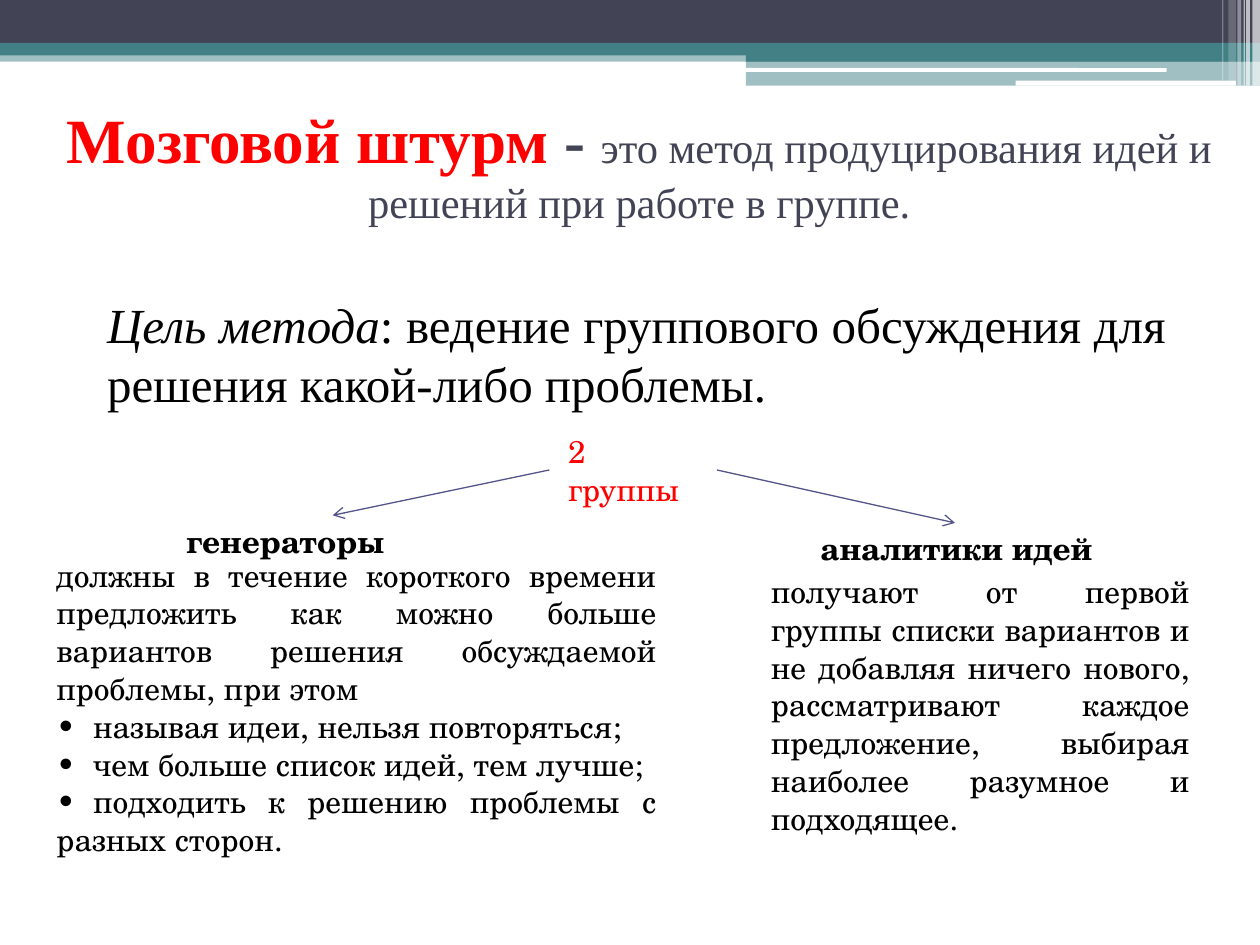
from dataclasses import dataclass
from lxml import etree
from pptx import Presentation
from pptx import util as u
from pptx.dml.color import RGBColor
from pptx.enum import shapes, text
from pptx.oxml.ns import qn

WIDTH, HEIGHT = u.Inches(10), u.Inches(7.5)
COLUMNS, ROWS = 100, 75


@dataclass(frozen=True)
class Theme:
    slate: str = "424456"
    teal: str = "438086"
    white: str = "FFFFFF"
    black: str = "000000"
    red: str = "FF0000"
    arrow: str = "53548A"
    serif: str = "Times New Roman"
    school: str = "TeX Gyre Schola"
    title: float = 36
    definition: float = 24.3
    goal: float = 28
    body: float = 18
    hairline: float = 0.75


THEME = Theme()


def across(columns):
    return round(WIDTH * columns / COLUMNS)


def down(rows):
    return round(HEIGHT * rows / ROWS)


def place(left, top, width, height):
    return across(left), down(top), across(width), down(height)


def style(target, values):
    for name, value in values.items():
        setattr(target, name, value)


def add_bar(page, area, color, opacity=100, kind=shapes.MSO_SHAPE.RECTANGLE):
    bar = page.shapes.add_shape(kind, *place(*area))
    bar.shadow.inherit = False
    bar.fill.solid()
    bar.fill.fore_color.rgb = RGBColor.from_string(color)
    bar.line.fill.background()
    if opacity < 100:
        tint = bar.fill._xPr.find(qn("a:solidFill"))[0]
        etree.SubElement(tint, qn("a:alpha"), val=str(opacity * 1000))


def add_stripes(page):
    add_bar(page, (0, 4, 100, 0.9), THEME.teal, 50)
    add_bar(page, (0, 0, 100, 3.4), THEME.slate)
    add_bar(page, (0, 3.4, 100, 1), THEME.teal)
    add_bar(page, (59.2, 3.9, 40.8, 1), THEME.teal)
    add_bar(page, (59.2, 4.8, 40.8, 2), THEME.teal, 50)
    for area in ((59.1, 5.4, 33.5, 0.3), (80.6, 6.4, 17.5, 0.4)):
        add_bar(page, area, THEME.white, kind=shapes.MSO_SHAPE.ROUNDED_RECTANGLE)
    for left, width, height, opacity in (
        (99.4, 0.6, 6.8, 65), (98.9, 0.3, 6.8, 65), (98.7, 0.1, 6.8, 60),
        (98.2, 0.3, 6.8, 40), (97.5, 0.6, 6.4, 20), (97, 0.1, 6.4, 30),
    ):
        add_bar(page, (left, 0, width, height), THEME.white, opacity)


def add_text(page, area, paragraphs, align=text.PP_ALIGN.LEFT, **frame_format):
    box = page.shapes.add_textbox(*place(*area))
    frame = box.text_frame
    style(frame, {"word_wrap": True, **frame_format})
    for index, spans in enumerate(paragraphs):
        para = frame.add_paragraph() if index else frame.paragraphs[0]
        para.alignment = align
        if spans[0][0].startswith("•"):
            tabs = etree.SubElement(para._p.get_or_add_pPr(), qn("a:tabLst"))
            etree.SubElement(tabs, qn("a:tab"), pos=str(across(2.9)), algn="l")
        for words, color, values in spans:
            span = para.add_run()
            span.text = words
            style(span.font, values)
            span.font.color.rgb = RGBColor.from_string(color)


def plain(words, color=THEME.black, **values):
    font = {"name": THEME.school, "size": u.Pt(THEME.body), **values}
    return [(words, color, font)]


def add_arrow(page, start, end):
    arrow = page.shapes.add_connector(
        shapes.MSO_CONNECTOR.STRAIGHT,
        across(start[0]), down(start[1]), across(end[0]), down(end[1]))
    arrow.line.width = u.Pt(THEME.hairline)
    arrow.line.color.rgb = RGBColor.from_string(THEME.arrow)
    etree.SubElement(arrow.line._get_or_add_ln(), qn("a:tailEnd"), type="arrow")
    etree.SubElement(arrow._element.spPr, qn("a:effectLst"))


def add_heading(page):
    large = {"name": THEME.serif, "size": u.Pt(THEME.title), "bold": True}
    small = {"name": THEME.serif, "size": u.Pt(THEME.definition)}
    add_text(page, (4.3, 8.2, 92.9, 9.6), [[
        ("Мозговой штурм ", THEME.red, large),
        ("- ", THEME.slate, large),
        ("это метод продуцирования идей и решений при работе в группе.",
         THEME.slate, small),
    ]], text.PP_ALIGN.CENTER, vertical_anchor=text.MSO_ANCHOR.MIDDLE)


def add_goal(page):
    font = {"name": THEME.serif, "size": u.Pt(THEME.goal)}
    add_text(page, (3.5, 22.5, 90, 9.8), [[
        ("Цель метода", THEME.black, {**font, "italic": True}),
        (": ведение группового обсуждения для решения какой-либо проблемы.",
         THEME.black, font),
    ]], text.PP_ALIGN.JUSTIFY, margin_left=across(5), margin_top=down(0.9))


def add_groups(page):
    add_text(page, (44.1, 33.8, 12.8, 7.1), [plain("2 группы", THEME.red)],
             margin_right=across(2))
    for start, end in (((43.6, 37.3), (26.4, 40.9)), ((56.9, 37.3), (75.8, 41.5))):
        add_arrow(page, start, end)
    add_text(page, (13.8, 40.9, 18.1, 4), [plain("генераторы", bold=True)])
    add_text(page, (63.4, 41.5, 24.8, 4), [plain(" аналитики идей", bold=True)])
    generators = (
        "должны в течение короткого времени предложить как можно больше "
        "вариантов решения обсуждаемой проблемы, при этом",
        "•\tназывая идеи, нельзя повторяться;",
        "•\tчем больше список идей, тем лучше;",
        "•\tподходить к решению проблемы с разных сторон.",
    )
    analysts = (
        "получают от первой группы списки вариантов и не добавляя ничего "
        "нового, рассматривают каждое предложение, выбирая наиболее "
        "разумное и подходящее.",
    )
    for area, lines in (((3.5, 43.6, 49.6, 25.2), generators),
                        ((60.2, 44.9, 35.2, 22.2), analysts)):
        add_text(page, area, [plain(line) for line in lines],
                 text.PP_ALIGN.JUSTIFY)


def main():
    deck = Presentation()
    style(deck, {"slide_width": WIDTH, "slide_height": HEIGHT})
    page = deck.slides.add_slide(deck.slide_layouts[6])
    add_stripes(page)
    add_heading(page)
    add_goal(page)
    add_groups(page)
    deck.save("out.pptx")


if __name__ == "__main__":
    main()
